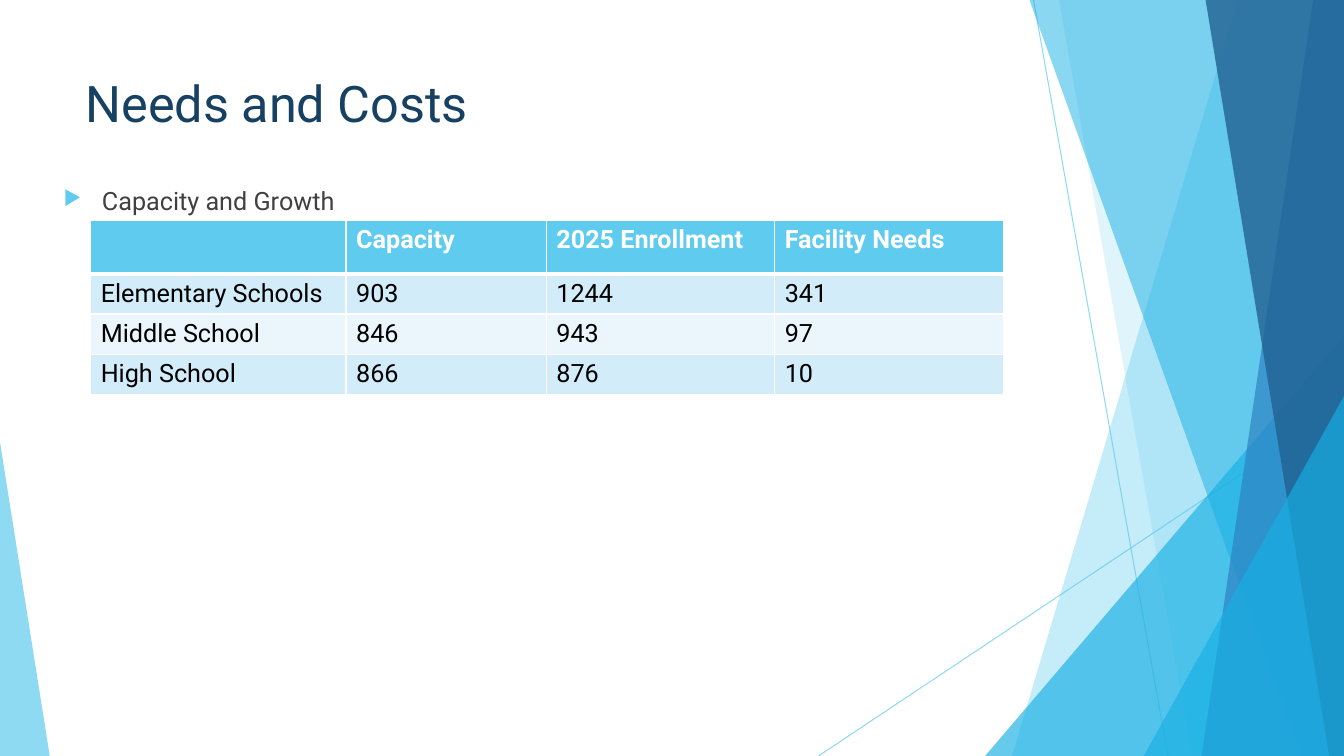
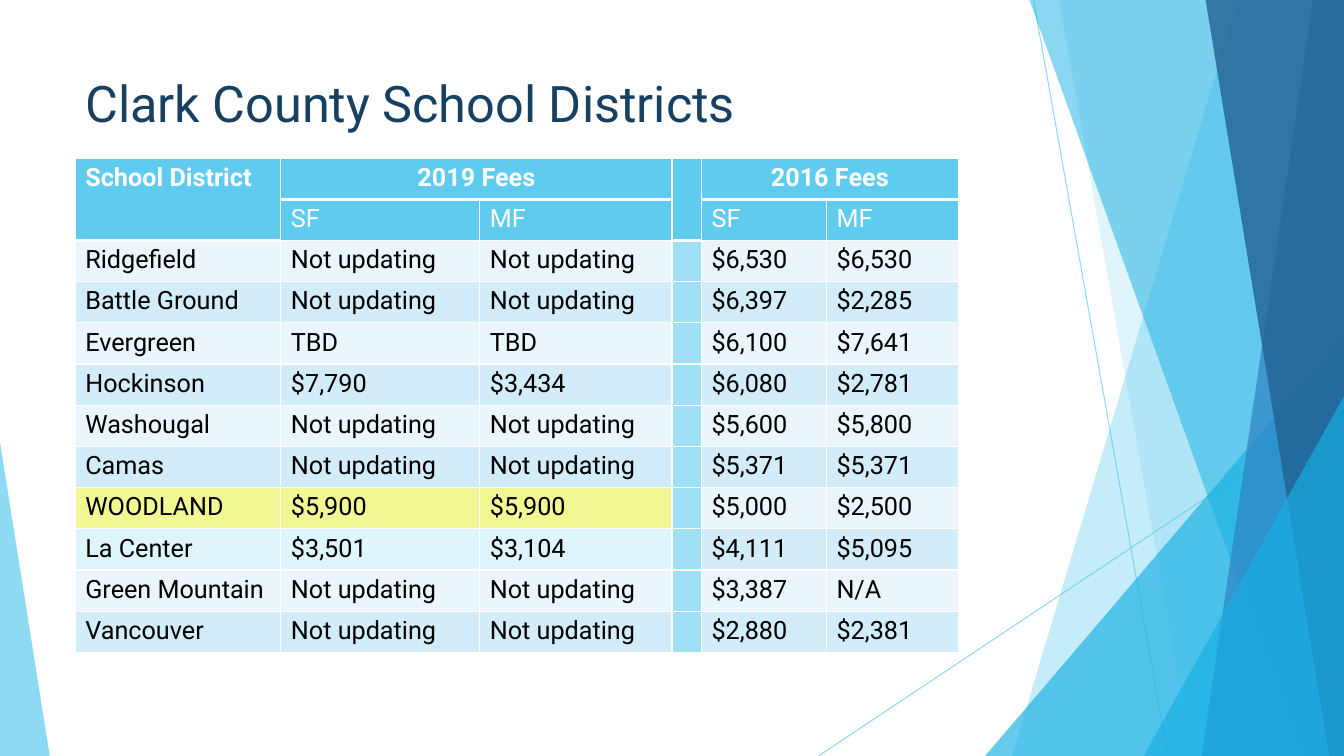
import functools
from dataclasses import dataclass, field

import pptx
import pptx.dml.color
import pptx.enum.shapes
import pptx.enum.text
import pptx.oxml
import pptx.oxml.ns
import pptx.slide
import pptx.table
import pptx.util

RGBColor = pptx.dml.color.RGBColor
qn = pptx.oxml.ns.qn

SKY = RGBColor(0x5F, 0xCB, 0xEF)
CYAN = RGBColor(0x17, 0xB0, 0xE4)
BLUE = RGBColor(0x2E, 0x83, 0xC3)
NAVY = RGBColor(0x22, 0x62, 0x92)
TITLE_INK = RGBColor(0x17, 0x41, 0x62)
BODY_INK = RGBColor(0x40, 0x40, 0x40)
BLACK = RGBColor(0x00, 0x00, 0x00)
WHITE = RGBColor(0xFF, 0xFF, 0xFF)
ROW_PALE = RGBColor(0xEA, 0xF6, 0xFC)
ROW_TINT = RGBColor(0xD2, 0xEC, 0xF9)
SPACER = RGBColor(0x9F, 0xE0, 0xF5)
HIGHLIGHT = RGBColor(0xF0, 0xF7, 0x93)
AQUA = RGBColor(0xDF, 0xF5, 0xFC)

FONT = "Roboto"
WIDTH = pptx.util.Inches(13.33)
HEIGHT = pptx.util.Inches(7.5)
TITLE_LEFT, TITLE_TOP, TEXT_WIDTH = 5.6, 8.9, 70.5


def across(percent: float) -> pptx.util.Emu:
    """Length as a percentage of the slide's width."""
    return pptx.util.Emu(round(WIDTH * percent / 100))


def down(percent: float) -> pptx.util.Emu:
    """Length as a percentage of the slide's height."""
    return pptx.util.Emu(round(HEIGHT * percent / 100))


# Places and sizes below are percentages of the slide's width and height.
@dataclass(frozen=True)
class Ray:
    start: tuple[float, float]
    end: tuple[float, float]


@dataclass(frozen=True)
class Band:
    """Area from a slanted edge to the right side of the slide."""
    top_x: float
    bottom_x: float
    color: RGBColor
    opacity: int


@dataclass(frozen=True)
class Corner:
    """Right triangle standing on the bottom edge."""
    left: float
    top: float
    width: float
    apex: float
    color: RGBColor
    opacity: int


@dataclass(frozen=True)
class Grid:
    left: float
    top: float
    columns: list[float]
    rows: list[float]
    cells: list[list[str]]
    header_rows: int = 1
    merges: list[tuple[int, int, int, int]] = field(default_factory=list)
    fills: dict[tuple[int, int], RGBColor] = field(default_factory=dict)


DECORATION = [
    Ray((76.9, 0), (86.9, 100)),
    Ray((100, 53.7), (60.9, 100)),
    Band(92.1, 75.3, SKY, 36),
    Band(78.8, 88.7, SKY, 20),
    Corner(73.3, 44.4, 26.7, 1, CYAN, 66),
    Band(76.6, 96.8, CYAN, 50),
    Band(97.7, 89.4, BLUE, 70),
    Band(89.7, 98.9, NAVY, 80),
    Corner(85.1, 52.4, 14.9, 1, CYAN, 66),
    Corner(0, 58.5, 3.7, 0, SKY, 70),
]

CAPACITY = Grid(
    left=6.75, top=29.1,
    columns=[19, 14.9, 17, 17],
    rows=[7.1] + [5.3] * 3,
    cells=[
        ["", "Capacity", "2025 Enrollment", "Facility Needs"],
        ["Elementary Schools", "903", "1244", "341"],
        ["Middle School", "846", "943", "97"],
        ["High School", "866", "876", "10"],
    ],
)

SAME = "Not updating"
FEES = Grid(
    left=TITLE_LEFT, top=20.9,
    columns=[15.3, 14.8, 14.3, 2.2, 9.3, 9.8],
    rows=[5.5, 5.2] + [5.45] * 10,
    cells=[
        ["School District", "2019 Fees", "", "", "2016 Fees", ""],
        ["", "SF", "MF", "", "SF", "MF"],
        ["Ridgefield", SAME, SAME, "", "$6,530", "$6,530"],
        ["Battle Ground", SAME, SAME, "", "$6,397", "$2,285"],
        ["Evergreen", "TBD", "TBD", "", "$6,100", "$7,641"],
        ["Hockinson", "$7,790", "$3,434", "", "$6,080", "$2,781"],
        ["Washougal", SAME, SAME, "", "$5,600", "$5,800"],
        ["Camas", SAME, SAME, "", "$5,371", "$5,371"],
        ["WOODLAND", "$5,900", "$5,900", "", "$5,000", "$2,500"],
        ["La Center", "$3,501", "$3,104", "", "$4,111", "$5,095"],
        ["Green Mountain", SAME, SAME, "", "$3,387", "N/A"],
        ["Vancouver", SAME, SAME, "", "$2,880", "$2,381"],
    ],
    header_rows=2,
    merges=[(0, 0, 1, 0), (0, 1, 0, 2), (0, 3, 1, 3), (0, 4, 0, 5)],
    fills={(row, 3): SPACER for row in range(2, 12)}
    | {(8, column): HIGHLIGHT for column in range(3)}
    | {(9, column): AQUA for column in range(3)},
)


def set_opacity(shape, percent: int) -> None:
    for color in shape._element.spPr.iter(qn("a:srgbClr")):
        pptx.oxml.ns  # namespace helpers are loaded with the submodule
        alpha = color.makeelement(qn("a:alpha"), {"val": str(percent * 1000)})
        color.append(alpha)


def paint(shape, color: RGBColor, opacity: int) -> None:
    shape.shadow.inherit = False
    shape.line.fill.background()
    shape.fill.solid()
    shape.fill.fore_color.rgb = color
    set_opacity(shape, opacity)


@functools.singledispatch
def draw(part, page: pptx.slide.Slide) -> None:
    raise TypeError(part)


@draw.register
def draw_ray(part: Ray, page: pptx.slide.Slide) -> None:
    line = page.shapes.add_connector(
        pptx.enum.shapes.MSO_CONNECTOR.STRAIGHT,
        across(part.start[0]), down(part.start[1]),
        across(part.end[0]), down(part.end[1]))
    line.line.color.rgb = SKY
    line.line.width = pptx.util.Pt(0.75)
    set_opacity(line, 70)
    properties = line._element.spPr
    properties.append(properties.makeelement(qn("a:effectLst"), {}))


@draw.register
def draw_band(part: Band, page: pptx.slide.Slide) -> None:
    outline = page.shapes.build_freeform(across(part.top_x), 0)
    outline.add_line_segments([
        (WIDTH, 0), (WIDTH, HEIGHT), (across(part.bottom_x), HEIGHT)])
    paint(outline.convert_to_shape(), part.color, part.opacity)


@draw.register
def draw_corner(part: Corner, page: pptx.slide.Slide) -> None:
    triangle = page.shapes.add_shape(
        pptx.enum.shapes.MSO_SHAPE.ISOSCELES_TRIANGLE,
        across(part.left), down(part.top),
        across(part.width), down(100 - part.top))
    triangle.adjustments[0] = part.apex
    paint(triangle, part.color, part.opacity)


def style_text(para, size: float, color: RGBColor, bold: bool = False) -> None:
    for span in para.runs:
        span.font.name = FONT
        span.font.size = pptx.util.Pt(size)
        span.font.color.rgb = color
        span.font.bold = bold


def add_page(deck, title: str, title_height: float) -> pptx.slide.Slide:
    page = deck.slides.add_slide(deck.slide_layouts.get_by_name("Title Only"))
    for part in DECORATION:
        draw(part, page)
    box = page.shapes.title
    box.left, box.top = across(TITLE_LEFT), down(TITLE_TOP)
    box.width, box.height = across(TEXT_WIDTH), down(title_height)
    frame = box.text_frame
    frame.text = title
    frame.vertical_anchor = pptx.enum.text.MSO_ANCHOR.TOP
    frame.paragraphs[0].alignment = pptx.enum.text.PP_ALIGN.LEFT
    style_text(frame.paragraphs[0], 36, TITLE_INK)
    return page


def add_bullet(page: pptx.slide.Slide, text: str) -> None:
    box = page.shapes.add_textbox(
        across(4), down(23.9), across(TEXT_WIDTH), down(56.5))
    box.text_frame.word_wrap = True
    para = box.text_frame.paragraphs[0]
    para.text = text
    para.space_before = pptx.util.Pt(10)
    style_text(para, 18, BODY_INK)
    properties = para._p.get_or_add_pPr()
    indent = pptx.util.Inches(0.38)
    properties.set("marL", str(indent))
    properties.set("indent", str(-indent))
    bullet_color = properties.makeelement(qn("a:buClr"), {})
    bullet_color.append(
        bullet_color.makeelement(qn("a:srgbClr"), {"val": str(SKY)}))
    properties.append(bullet_color)
    for tag, attributes in (("a:buSzPct", {"val": "80000"}),
                            ("a:buChar", {"char": "▶"})):
        properties.append(properties.makeelement(qn(tag), attributes))


def set_borders(cell: pptx.table._Cell, bottom_width: float) -> None:
    properties = cell._tc.get_or_add_tcPr()
    for side, width in zip("LRTB", (1, 1, 1, bottom_width)):
        properties.append(pptx.oxml.parse_xml(
            f'<a:ln{side} {pptx.oxml.ns.nsdecls("a")}'
            f' w="{pptx.util.Pt(width)}"><a:solidFill>'
            f'<a:srgbClr val="{WHITE}"/></a:solidFill></a:ln{side}>'))


def add_grid(page: pptx.slide.Slide, grid: Grid) -> None:
    table = page.shapes.add_table(
        len(grid.rows), len(grid.columns), across(grid.left), down(grid.top),
        across(sum(grid.columns)), down(sum(grid.rows))).table
    table.first_row = table.horz_banding = False
    for column, width in zip(table.columns, grid.columns):
        column.width = across(width)
    for row, height in zip(table.rows, grid.rows):
        row.height = down(height)
    for r, texts in enumerate(grid.cells):
        is_header = r < grid.header_rows
        band = SKY if is_header else ROW_TINT if r % 2 else ROW_PALE
        for c, text in enumerate(texts):
            cell = table.cell(r, c)
            set_borders(cell, 3 if r == 0 else 1)
            cell.fill.solid()
            cell.fill.fore_color.rgb = grid.fills.get((r, c), band)
            if text:
                cell.text_frame.text = text
                style_text(cell.text_frame.paragraphs[0], 18,
                           WHITE if is_header else BLACK, bold=r == 0)
    for top, left, bottom, right in grid.merges:
        origin = table.cell(top, left)
        origin.merge(table.cell(bottom, right))
        if right > left:
            center = pptx.enum.text.PP_ALIGN.CENTER
            origin.text_frame.paragraphs[0].alignment = center


def main() -> None:
    deck = pptx.Presentation()
    deck.slide_width, deck.slide_height = WIDTH, HEIGHT

    needs = add_page(deck, "Needs and Costs", 14.9)
    add_bullet(needs, "Capacity and Growth")
    add_grid(needs, CAPACITY)

    districts = add_page(deck, "Clark County School Districts", 12)
    add_grid(districts, FEES)

    deck.save("out.pptx")


if __name__ == "__main__":
    main()
